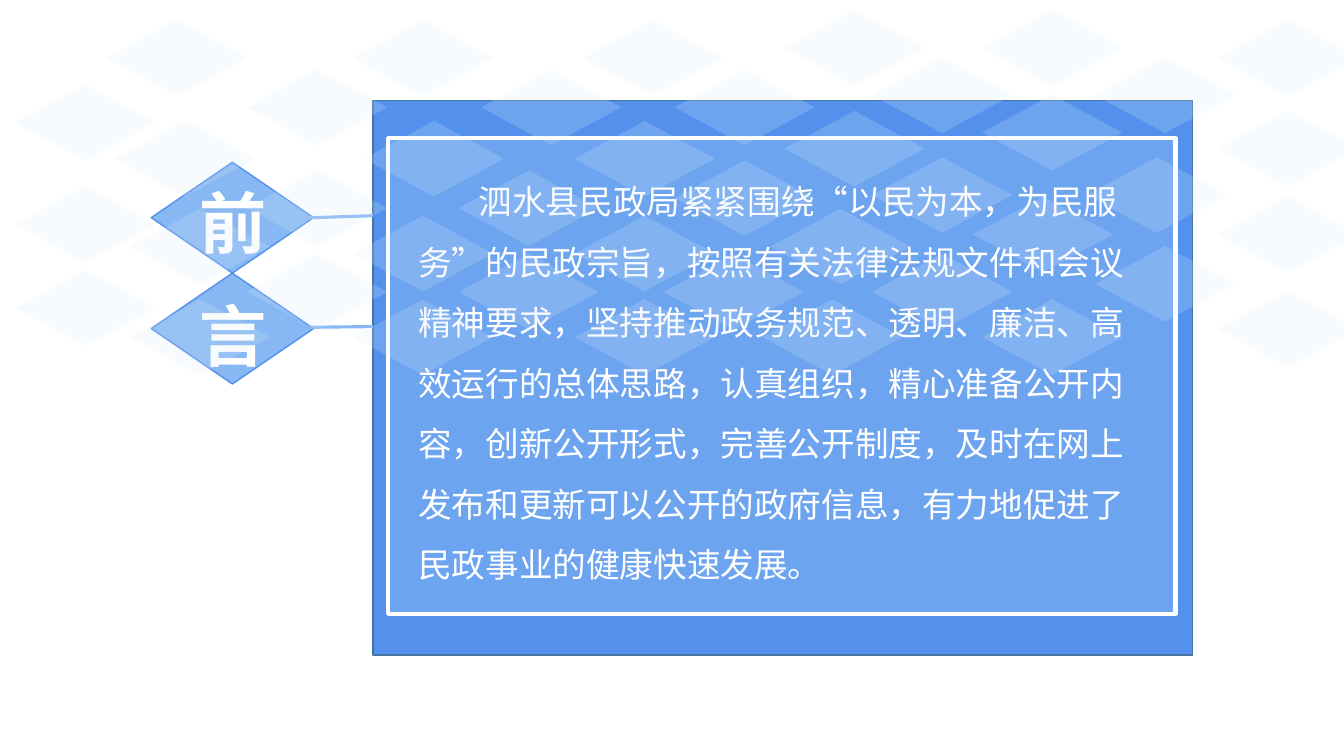
from dataclasses import dataclass

from lxml.etree import SubElement
from pptx import Presentation
from pptx.dml.color import RGBColor
from pptx.enum.shapes import MSO_CONNECTOR, MSO_SHAPE
from pptx.enum.text import MSO_AUTO_SIZE
from pptx.oxml.ns import qn
from pptx.shapes.autoshape import Shape
from pptx.shapes.group import GroupShape
from pptx.util import Inches, Pt

FONT = "Noto Sans CJK SC"
WHITE = "FFFFFF"
BLUE = "5391ED"
LIGHT_BLUE = "87B8F3"
PREFACE = (
    "泗水县民政局紧紧围绕“以民为本，为民服务”的民政宗旨，"
    "按照有关法律法规文件和会议精神要求，"
    "坚持推动政务规范、透明、廉洁、高效运行的总体思路，"
    "认真组织，精心准备公开内容，创新公开形式，完善公开制度，"
    "及时在网上发布和更新可以公开的政府信息，"
    "有力地促进了民政事业的健康快速发展。"
)


@dataclass(frozen=True)
class Area:
    left: float
    top: float
    width: float
    height: float

    def lengths(self) -> tuple[int, int, int, int]:
        return Inches(self.left), Inches(self.top), Inches(self.width), Inches(self.height)


@dataclass(frozen=True)
class Panel:
    area: Area
    fill: str
    line: str
    weight: float


@dataclass(frozen=True)
class Badge:
    character: str
    diamond_top: float
    text_top: float
    link_start: tuple[float, float]
    link_end: tuple[float, float]


@dataclass(frozen=True)
class TileColumn:
    left: float
    tops: tuple[float, ...]


PANELS = (
    Panel(Area(3.7, 1, 8.13, 5.5), BLUE, "43739E", 1),
    Panel(Area(3.85, 1.37, 7.81, 4.72), "6CA4F0", WHITE, 3),
)
BADGES = (
    Badge("前", 1.61, 1.75, (2.78, 2.17), (3.7, 2.14)),
    Badge("言", 2.71, 2.87, (2.8, 3.25), (3.7, 3.24)),
)
TILE_COLUMNS = (
    TileColumn(0.15, (0.84, 1.85, 2.68)),
    TileColumn(1.06, (0.2,)),
    TileColumn(1.14, (1.2,)),
    TileColumn(1.29, (2.07, 2.97)),
    TileColumn(2.45, (0.69, 1.69, 2.52)),
    TileColumn(3.5, (0.2, 2.14, 2.97)),
    TileColumn(3.61, (1.2,)),
    TileColumn(4.55, (1.69, 2.52)),
    TileColumn(4.77, (0.69,)),
    TileColumn(5.7, (1.2, 2.14, 2.97)),
    TileColumn(5.78, (0.2,)),
    TileColumn(6.58, (2.52,)),
    TileColumn(6.69, (0.69, 1.59)),
    TileColumn(7.56, (2.97,)),
    TileColumn(7.64, (2.07,)),
    TileColumn(7.78, (0.1, 1.1)),
    TileColumn(8.65, (0.57, 1.56, 2.52)),
    TileColumn(9.65, (1.95,)),
    TileColumn(9.74, (0.1, 0.94, 2.97)),
    TileColumn(10.78, (1.56,)),
    TileColumn(10.86, (0.57, 2.44)),
    TileColumn(12.08, (0.2, 1.1, 1.95, 2.89)),
)


def color(value: str) -> RGBColor:
    return RGBColor.from_string(value)


def add_figure(group: GroupShape, kind: MSO_SHAPE, area: Area, fill: str,
               line: str | None = None, weight: float = 1,
               opacity: int = 100) -> Shape:
    figure = group.shapes.add_shape(kind, *area.lengths())
    figure.shadow.inherit = False
    figure.fill.solid()
    figure.fill.fore_color.rgb = color(fill)
    if opacity < 100:
        tint = figure.fill._xPr.find(qn("a:solidFill"))[0]
        SubElement(tint, qn("a:alpha")).set("val", str(opacity * 1000))
    if line is None:
        figure.line.fill.background()
    else:
        figure.line.color.rgb = color(line)
        figure.line.width = Pt(weight)
    return figure


def add_text(group: GroupShape, text: str, area: Area, *, size: float,
             bold: bool = False, wrap: bool = True, spacing: float = 1,
             indent: float = 0) -> None:
    box = group.shapes.add_textbox(*area.lengths())
    frame = box.text_frame
    frame.word_wrap = wrap
    frame.auto_size = MSO_AUTO_SIZE.SHAPE_TO_FIT_TEXT
    para = frame.paragraphs[0]
    para.line_spacing = spacing
    if indent:
        properties = para._p.get_or_add_pPr()
        properties.set("marL", "0")
        properties.set("indent", str(Inches(indent)))
    span = para.add_run()
    span.text = text
    span.font.size = Pt(size)
    span.font.bold = bold
    span.font.name = FONT
    span.font.color.rgb = color(WHITE)
    run_properties = span._r.get_or_add_rPr()
    run_properties.set("lang", "zh-CN")
    SubElement(run_properties, qn("a:ea")).set("typeface", FONT)


def add_link(group: GroupShape, badge: Badge) -> None:
    ends = [Inches(value) for value in badge.link_start + badge.link_end]
    link = group.shapes.add_connector(MSO_CONNECTOR.STRAIGHT, *ends)
    link.line.color.rgb = color(LIGHT_BLUE)
    link.line.width = Pt(2.25)
    SubElement(link._element.spPr, qn("a:effectLst"))


def main() -> None:
    deck = Presentation()
    deck.slide_width = Inches(13.33)
    deck.slide_height = Inches(7.5)
    page = deck.slides.add_slide(deck.slide_layouts[6])

    preface = page.shapes.add_group_shape()
    for panel in PANELS:
        add_figure(preface, MSO_SHAPE.RECTANGLE, panel.area, panel.fill,
                   panel.line, panel.weight)
    add_text(preface, PREFACE, Area(4.05, 1.55, 7.44, 4.79), size=24,
             spacing=1.5, indent=0.6)

    heading = page.shapes.add_group_shape()
    for badge in BADGES:
        add_figure(heading, MSO_SHAPE.DIAMOND, Area(1.5, badge.diamond_top, 1.61, 1.1),
                   LIGHT_BLUE, BLUE)
    for badge in BADGES:
        add_link(heading, badge)
        add_text(heading, badge.character, Area(1.88, badge.text_top, 0.87, 0.91),
                 size=48, bold=True, wrap=False)

    pattern = page.shapes.add_group_shape()
    for column in TILE_COLUMNS:
        for top in column.tops:
            add_figure(pattern, MSO_SHAPE.DIAMOND, Area(column.left, top, 1.39, 0.75),
                       "DEEBF7", opacity=20)

    deck.save("out.pptx")


if __name__ == "__main__":
    main()
